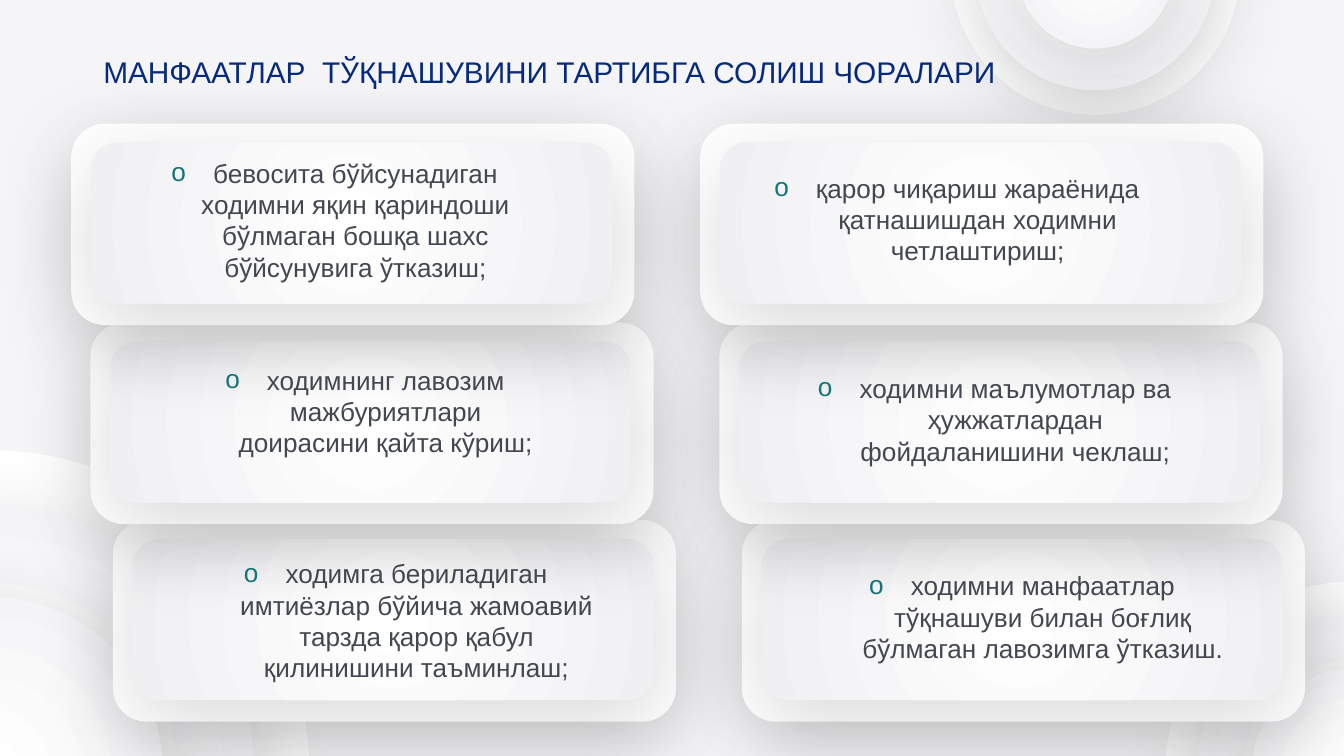
from typing import NamedTuple, Optional

from lxml import etree
from pptx import Presentation
from pptx import util as u
from pptx.dml.color import RGBColor
from pptx.enum import shapes, text
from pptx.oxml import parse_xml
from pptx.oxml.ns import nsdecls, qn

# Grid of square cells, 100 columns by 56.25 rows
CELL = u.Inches(0.1)
COLUMNS, ROWS = 100, 56.25

BACKGROUND, WHITE, PALE = "F5F5F7", "FFFFFF", "F0F0F3"
NAVY, GREY, TEAL = "072B7C", "434750", "137578"
FONT = "Arial"
INDENT = u.Inches(0.31)


class Area(NamedTuple):
    column: float
    row: float
    width: float
    height: float

    def inset(self, dx: float, dy: float, width: float, height: float) -> "Area":
        return Area(self.column + dx, self.row + dy, width, height)


class Rings(NamedTuple):
    center_column: float
    center_row: float
    diameters: tuple[float, ...]


class Measure(NamedTuple):
    area: Area
    wording: str


RINGS = (
    Rings(-0.8, 57.3, (47.6, 39.4, 25.8)),
    Rings(100.8, 57.35, (28.2, 23.4, 15.3)),
    Rings(81.5, -2.2, (21.5, 17.8, 11.6)),
)

# Cards overlap upwards, so the lowest one is drawn first
CARD_STARTS = ((8.4, 38.7), (6.73, 24), (5.3, 9.2))
COLUMN_STEP = 46.8

MEASURES = (
    Measure(Area(8.2, 11.2, 33.4, 10.4),
            "бевосита бўйсунадиган ходимни яқин қариндоши бўлмаган бошқа шахс бўйсунувига ўтказиш;"),
    Measure(Area(13.6, 26.6, 27.1, 8.1),
            "ходимнинг лавозим мажбуриятлари доирасини қайта кўриш;"),
    Measure(Area(12.6, 41, 33.7, 10.4),
            "ходимга бериладиган имтиёзлар бўйича жамоавий тарзда қарор қабул қилинишини таъминлаш;"),
    Measure(Area(56.1, 12.3, 30.2, 8.1),
            "қарор чиқариш жараёнида қатнашишдан ходимни четлаштириш;"),
    Measure(Area(58.9, 27.2, 30.2, 8.1),
            "ходимни маълумотлар ва ҳужжатлардан фойдаланишини чеклаш;"),
    Measure(Area(58.9, 41.9, 34.3, 8.1),
            "ходимни манфаатлар тўқнашуви билан боғлиқ бўлмаган лавозимга ўтказиш."),
)


def color(value: str) -> RGBColor:
    return RGBColor.from_string(value)


def place(area: Area) -> list[int]:
    return [round(length * CELL) for length in area]


def add_soft_shadow(shape) -> None:
    effects = shape._element.spPr.find(qn("a:effectLst"))
    effects.append(parse_xml(
        f'<a:outerShdw {nsdecls("a")} blurRad="{u.Pt(45)}" dist="{u.Pt(11.2)}" '
        f'dir="{85 * 60000}" algn="ctr" rotWithShape="0">'
        '<a:srgbClr val="000000"><a:alpha val="15000"/></a:srgbClr></a:outerShdw>'))


def fill_radially(shape) -> None:
    shape.fill.gradient()
    for stop, value in zip(shape.fill.gradient_stops, (WHITE, PALE)):
        stop.color.rgb = color(value)
    gradient = shape._element.spPr.find(qn("a:gradFill"))
    gradient.replace(gradient.find(qn("a:lin")), parse_xml(
        f'<a:path {nsdecls("a")} path="circle">'
        '<a:fillToRect l="50000" t="50000" r="50000" b="50000"/></a:path>'))


def add_surface(slide, kind, area: Area, radial: bool, shadow: bool) -> None:
    shape = slide.shapes.add_shape(kind, *place(area))
    if radial:
        fill_radially(shape)
    else:
        shape.fill.solid()
        shape.fill.fore_color.rgb = color(WHITE)
    shape.line.fill.background()
    shape.shadow.inherit = False
    if shadow:
        add_soft_shadow(shape)


def add_rings(slide, rings: Rings) -> None:
    for order, size in enumerate(rings.diameters):
        area = Area(rings.center_column - size / 2, rings.center_row - size / 2, size, size)
        add_surface(slide, shapes.MSO_SHAPE.OVAL, area, radial=order > 0, shadow=order > 0)


def add_card(slide, column: float, row: float) -> None:
    frame = Area(column, row, 41.9, 15)
    face = frame.inset(1.45, 1.4, 38.8, 12)
    for area, radial in ((frame, False), (face, True)):
        add_surface(slide, shapes.MSO_SHAPE.ROUNDED_RECTANGLE, area, radial, shadow=True)


def add_bullet(paragraph, symbol: str, value: str) -> None:
    properties = paragraph._p.get_or_add_pPr()
    properties.set("marL", str(INDENT))
    properties.set("indent", str(-INDENT))
    bullet_color = etree.SubElement(properties, qn("a:buClr"))
    etree.SubElement(bullet_color, qn("a:srgbClr"), val=value)
    etree.SubElement(properties, qn("a:buFont"), typeface=FONT)
    etree.SubElement(properties, qn("a:buChar"), char=symbol)


def add_text(slide, area: Area, wording: str, *, size: float, ink: str,
             align=text.PP_ALIGN.LEFT, bullet: Optional[str] = None) -> None:
    frame = slide.shapes.add_textbox(*place(area)).text_frame
    frame.word_wrap = True
    frame.auto_size = text.MSO_AUTO_SIZE.SHAPE_TO_FIT_TEXT
    paragraph = frame.paragraphs[0]
    paragraph.alignment = align
    if bullet:
        add_bullet(paragraph, bullet, TEAL)
    run = paragraph.add_run()
    run.text = wording
    run.font.name = FONT
    run.font.size = u.Pt(size)
    run.font.color.rgb = color(ink)


def main() -> None:
    deck = Presentation()
    deck.slide_width, deck.slide_height = round(COLUMNS * CELL), round(ROWS * CELL)
    slide = deck.slides.add_slide(deck.slide_layouts[6])
    slide.background.fill.solid()
    slide.background.fill.fore_color.rgb = color(BACKGROUND)

    # Decorative rings at the edges
    for rings in RINGS:
        add_rings(slide, rings)

    # Two staggered columns of cards
    for side in range(2):
        for column, row in CARD_STARTS:
            add_card(slide, column + side * COLUMN_STEP, row)

    # Heading and the measures on the cards
    add_text(slide, Area(6.7, 3.5, 73.5, 3.7),
             "МАНФААТЛАР  ТЎҚНАШУВИНИ ТАРТИБГА СОЛИШ ЧОРАЛАРИ", size=16, ink=NAVY)
    for measure in MEASURES:
        add_text(slide, measure.area, measure.wording, size=14, ink=GREY,
                 align=text.PP_ALIGN.CENTER, bullet="o")

    deck.save("out.pptx")


if __name__ == "__main__":
    main()
